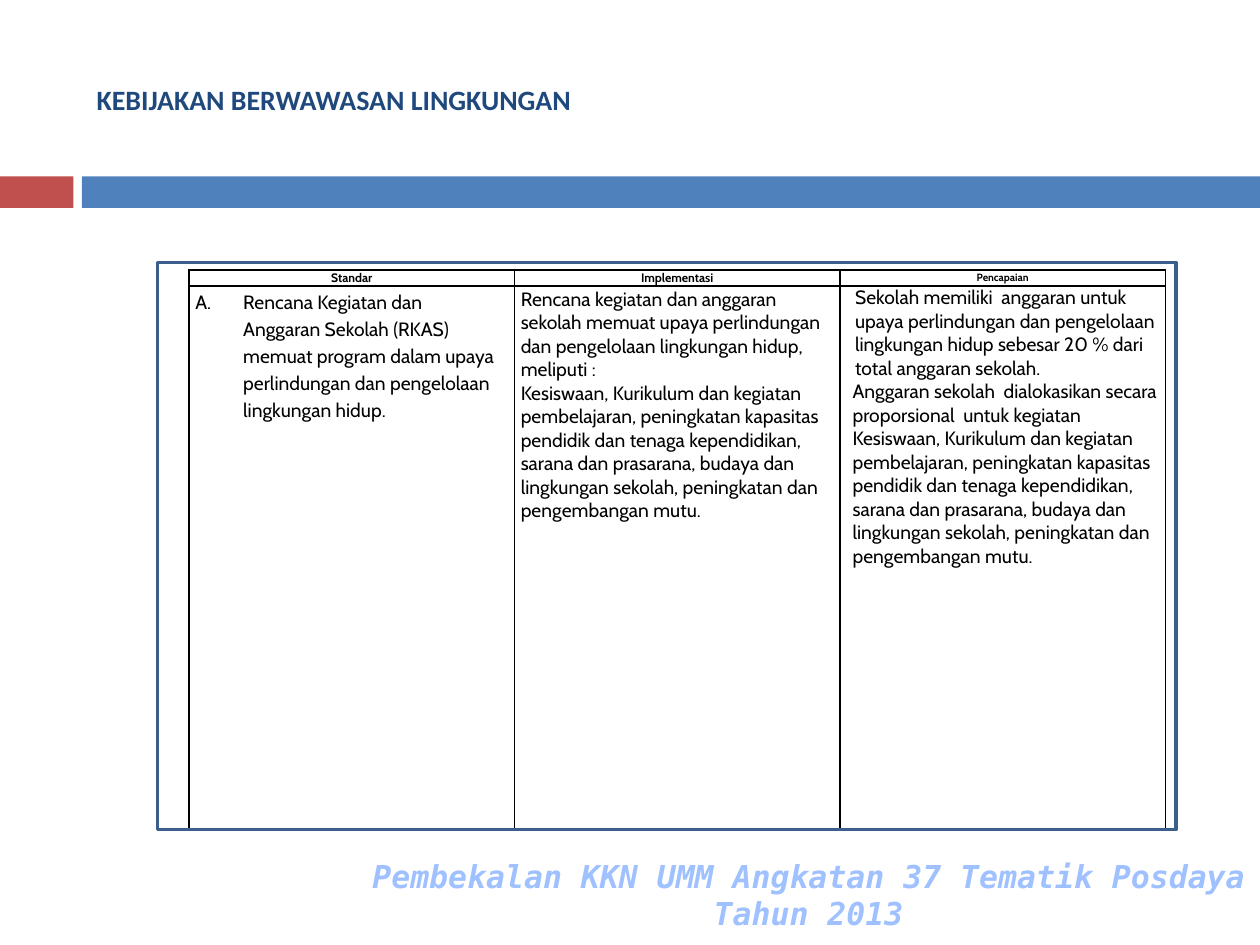
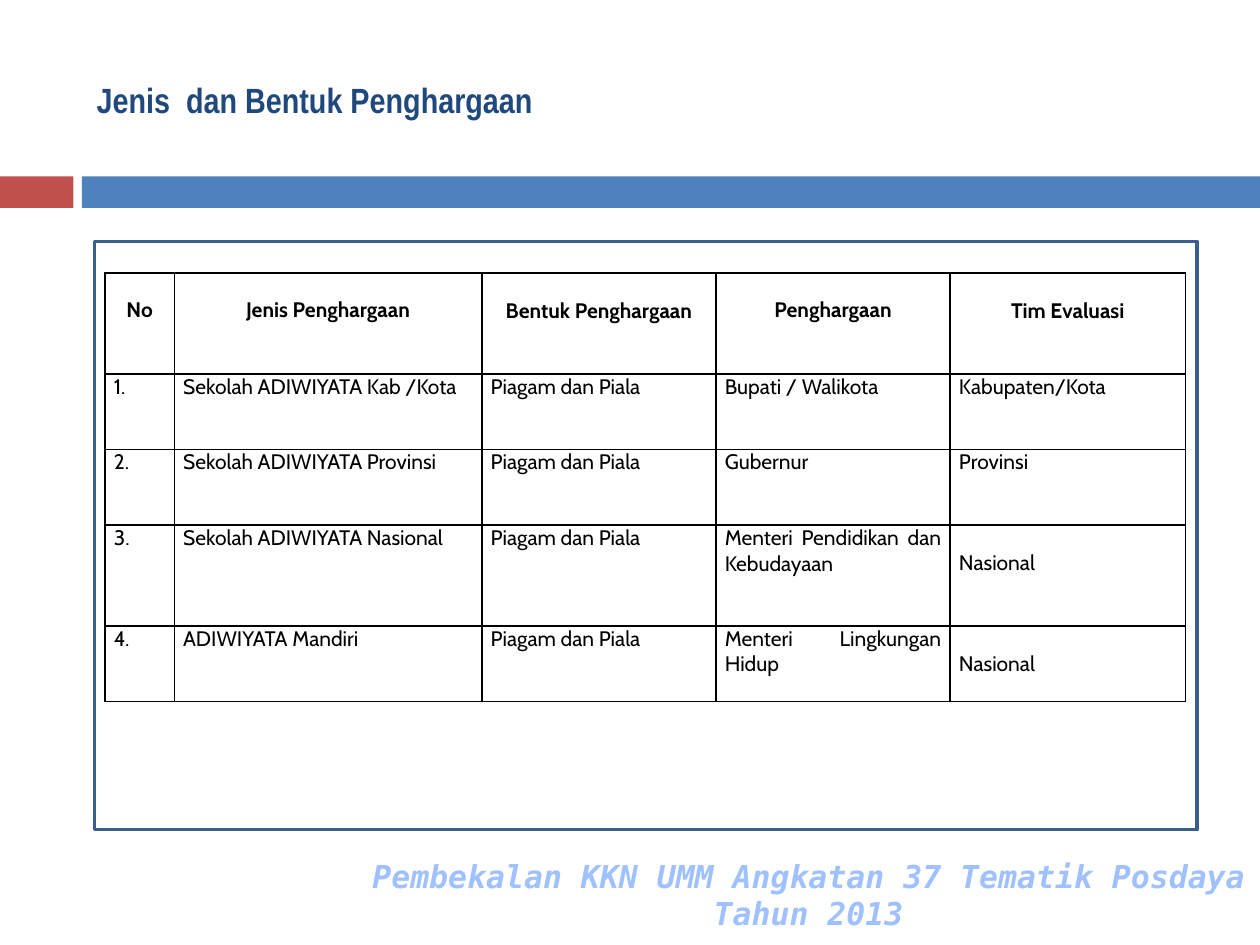
"""Builds two slides on green school policy and awards."""
from lxml.etree import SubElement
from pptx import Presentation
from pptx.dml.color import RGBColor
from pptx.enum.shapes import MSO_SHAPE
from pptx.enum.text import MSO_ANCHOR, MSO_AUTO_SIZE, PP_ALIGN
from pptx.oxml.ns import qn
from pptx.util import Inches, Pt

RED = RGBColor(0xC0, 0x50, 0x4D)
BLUE = RGBColor(0x4F, 0x81, 0xBD)
NAVY = RGBColor(0x1F, 0x49, 0x7D)
EDGE = RGBColor(0x3A, 0x5F, 0x8C)
PALE = RGBColor(0xA0, 0xC1, 0xFF)
BLACK = RGBColor(0, 0, 0)

deck = Presentation()
deck.slide_width, deck.slide_height = Inches(10), Inches(7.5)
UNIT = deck.slide_width / 120


def span(*units):
    """Turns grid units, 120 across and 90 down, into lengths."""
    return [round(unit * UNIT) for unit in units]


def write(frame, lines, color, look, para):
    """Fills a text frame with evenly formatted paragraphs."""
    frame.text = "\n".join(lines)
    for item in frame.paragraphs:
        for name, value in para.items():
            setattr(item, name, value)
        font = item.runs[0].font
        font.color.rgb = color
        for name, value in look.items():
            setattr(font, name, value)


LEFT = {"alignment": PP_ALIGN.LEFT}
MID = {"alignment": PP_ALIGN.CENTER}
JUST = {"alignment": PP_ALIGN.JUSTIFY}
BANDS = [(0, 7, RED), (7.8, 112.2, BLUE)]
FOOT = "Pembekalan KKN UMM Angkatan 37 Tematik Posdaya Tahun 2013"

policy = [
    [["Standar"], ["Implementasi"], ["Pencapaian"]],
    [
        ["Rencana Kegiatan dan  Anggaran Sekolah (RKAS) memuat program dalam upaya "
         "perlindungan dan pengelolaan lingkungan hidup."],
        ["Rencana kegiatan dan anggaran sekolah memuat upaya perlindungan dan "
         "pengelolaan lingkungan hidup, meliputi :",
         "Kesiswaan, Kurikulum dan kegiatan pembelajaran, peningkatan kapasitas "
         "pendidik dan tenaga kependidikan, sarana dan prasarana, budaya dan "
         "lingkungan sekolah, peningkatan dan pengembangan mutu."],
        ["Sekolah memiliki  anggaran untuk upaya perlindungan dan pengelolaan "
         "lingkungan hidup sebesar 20 % dari total anggaran sekolah.",
         "Anggaran sekolah  dialokasikan secara proporsional  untuk kegiatan "
         "Kesiswaan, Kurikulum dan kegiatan pembelajaran, peningkatan kapasitas "
         "pendidik dan tenaga kependidikan, sarana dan prasarana, budaya dan "
         "lingkungan sekolah, peningkatan dan pengembangan mutu."],
    ],
]
awards = [
    ("Sekolah ADIWIYATA Kab /Kota", "Bupati / Walikota", "Kabupaten/Kota"),
    ("Sekolah ADIWIYATA Provinsi", "Gubernur", "Provinsi"),
    ("Sekolah ADIWIYATA Nasional", "Menteri Pendidikan dan Kebudayaan", "Nasional"),
    ("ADIWIYATA Mandiri", "Menteri Lingkungan Hidup", "Nasional"),
]
prizes = [[["No"], ["Jenis Penghargaan"], ["Bentuk Penghargaan"],
           ["Penghargaan"], ["Tim Evaluasi"]]]
for num, (kind, giver, team) in enumerate(awards, 1):
    prizes.append([[f"{num}."], [kind], ["Piagam dan Piala"], [giver], [team]])

pages = [
    {"title": "KEBIJAKAN BERWAWASAN LINGKUNGAN", "font": "Calibri", "size": 16,
     "frame": (15, 25, 97, 54), "spot": (18, 25.7), "cols": [31] * 3,
     "rows": [1.44, 51.7], "cells": policy, "heads": [7, 7, 6], "body": 11,
     "pads": [0.6, 0.6, 0], "tops": [0.12, 0.12, 0], "align": [LEFT] * 3,
     "anchor": MSO_ANCHOR.MIDDLE, "drops": {}},
    {"title": "Jenis  dan Bentuk Penghargaan", "font": "Arial Narrow", "size": 20,
     "frame": (9, 23, 105, 56), "spot": (10, 26),
     "cols": [6.6, 29.3, 22.3, 22.3, 22.4], "rows": [9.6, 7.2, 7.2, 9.6, 7.2],
     "cells": prizes, "heads": [12] * 5, "body": 12, "pads": [0.84] * 5,
     "tops": [0] * 5, "align": [JUST, LEFT, JUST, JUST, JUST],
     "anchor": MSO_ANCHOR.TOP,
     "drops": {(0, 0): 2.3, (0, 1): 2.3, (0, 2): 2.4, (0, 3): 2.3, (0, 4): 2.4,
               (3, 4): 2.4, (4, 4): 2.4}},
]

for page in pages:
    slide = deck.slides.add_slide(deck.slide_layouts[5])
    shapes = slide.shapes
    for left, width, color in BANDS:
        band = shapes.add_shape(MSO_SHAPE.RECTANGLE, *span(left, 16.8, width, 3))
        band.shadow.inherit = False
        band.fill.solid()
        band.fill.fore_color.rgb = color
        band.line.fill.background()

    title = shapes.title
    title.left, title.top, title.width, title.height = span(8, 3, 107, 13)
    frame = title.text_frame
    frame.auto_size = MSO_AUTO_SIZE.NONE
    frame.vertical_anchor = MSO_ANCHOR.MIDDLE
    look = {"name": page["font"], "size": Pt(page["size"]), "bold": True}
    write(frame, [page["title"]], NAVY, look, LEFT)

    cols, rows = page["cols"], page["rows"]
    area = span(*page["spot"], sum(cols), sum(rows))
    table = shapes.add_table(len(rows), len(cols), *area).table
    table.first_row = table.horz_banding = False
    for col, width in zip(table.columns, span(*cols)):
        col.width = width
    for row, height in zip(table.rows, span(*rows)):
        row.height = height
    for r, line in enumerate(page["cells"]):
        for c, text in enumerate(line):
            cell = table.cell(r, c)
            pad, top = span(page["pads"][c], page["drops"].get((r, c), page["tops"][c]))
            box = {"margin_left": pad, "margin_right": pad, "margin_top": top,
                   "margin_bottom": 0,
                   "vertical_anchor": MSO_ANCHOR.TOP if r else page["anchor"]}
            for name, value in box.items():
                setattr(cell, name, value)
            props = cell._tc.get_or_add_tcPr()
            for side in "LRTB":
                edge = SubElement(props, qn(f"a:ln{side}"), w=str(Pt(1)))
                fill = SubElement(edge, qn("a:solidFill"))
                SubElement(fill, qn("a:srgbClr"), val=str(BLACK))
            cell.fill.background()
            size = page["body"] if r else page["heads"][c]
            look = {"name": "Cabin", "size": Pt(size), "bold": r == 0}
            write(cell.text_frame, text, BLACK, look, page["align"][c] if r else MID)

    if page["cells"] is policy:
        item = table.cell(1, 0).text_frame.paragraphs[0]
        item.line_spacing = 1.15
        props = item._p.get_or_add_pPr()
        props.set("marL", str(Inches(0.38)))
        props.set("indent", str(-Inches(0.38)))
        SubElement(props, qn("a:buFont"), typeface="+mj-lt")
        SubElement(props, qn("a:buAutoNum"), type="alphaUcPeriod")
        for item, inset in zip(table.cell(1, 2).text_frame.paragraphs, (0.12, 0.1)):
            item._p.get_or_add_pPr().set("marL", str(Inches(inset)))

    border = shapes.add_shape(MSO_SHAPE.RECTANGLE, *span(*page["frame"]))
    border.shadow.inherit = False
    border.fill.background()
    border.line.color.rgb = EDGE
    border.line.width = Pt(2)

    foot = shapes.add_textbox(*span(34, 81, 86, 4.8)).text_frame
    foot.word_wrap = True
    look = {"name": "DejaVu Sans Mono", "size": Pt(18), "bold": True, "italic": True}
    write(foot, [FOOT], PALE, look, MID)

deck.save("out.pptx")
